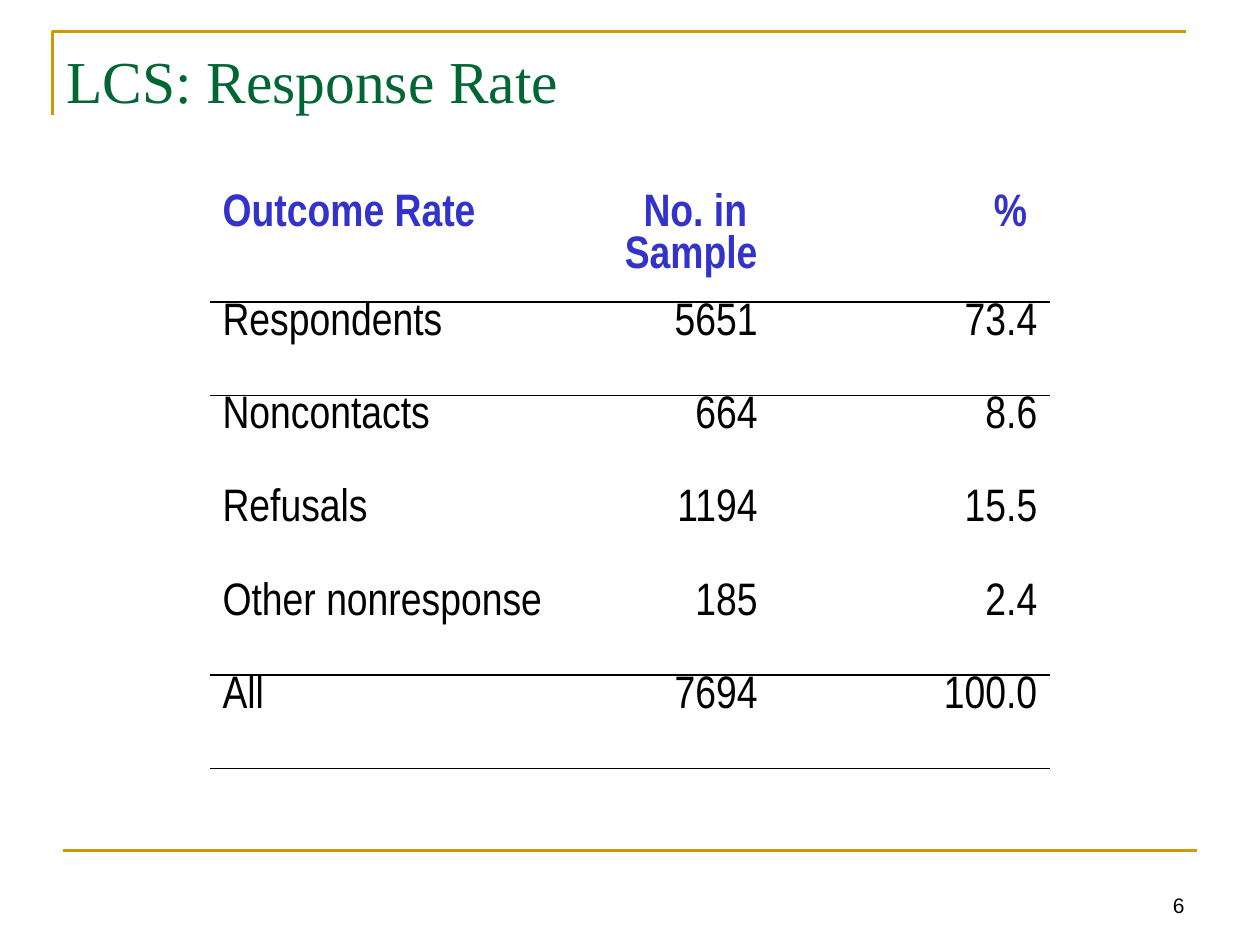
from lxml import etree
from pptx import Presentation
from pptx import util as u
from pptx.dml.color import RGBColor
from pptx.enum import shapes, text
from pptx.oxml import ns

Pt = u.Pt
GOLD = RGBColor(0xCC, 0x99, 0x00)
GREEN = RGBColor(0x00, 0x66, 0x33)
BLUE = RGBColor(0x33, 0x33, 0xCC)
BLACK = RGBColor(0, 0, 0)
LEFT, RIGHT = text.PP_ALIGN.LEFT, text.PP_ALIGN.RIGHT
TOP, MIDDLE, BOTTOM = (text.MSO_ANCHOR.TOP, text.MSO_ANCHOR.MIDDLE,
                       text.MSO_ANCHOR.BOTTOM)
NO_STYLE = "{2D5ABB26-0587-4C30-8999-92F81FD0307C}"

ROWS = [
    ("Outcome Rate", "No. in \nSample", "% "),
    ("Respondents", "5651", "73.4"),
    ("Noncontacts", "664", "8.6"),
    ("Refusals", "1194", "15.5"),
    ("Other nonresponse", "185", "2.4"),
    ("All", "7694", "100.0"),
]
COL_WIDTHS = (217.4, 102.8, 159.8)
ROW_HEIGHTS = (60.8,) + (53.3,) * 5
RULED_ROWS = {0: "B", 1: "T", 4: "B", 5: "TB"}


def write(tf, content, font="Arial", size=12, color=BLACK, bold=False, align=LEFT):
    """Fill a text frame, one paragraph per line of content."""
    for i, line in enumerate(content.split("\n")):
        p = tf.paragraphs[0] if i == 0 else tf.add_paragraph()
        p.alignment = align
        r = p.add_run()
        r.text = line
        r.font.name, r.font.size, r.font.bold = font, Pt(size), bold
        r.font.color.rgb = color


class SlideBuilder:
    def __init__(self, s, line_color=GOLD, line_width=1.5):
        self.s = s
        self.line_color = line_color
        self.line_width = line_width

    def _stroke(self, sp):
        sp.line.color.rgb = self.line_color
        sp.line.width = Pt(self.line_width)

    def line(self, x1, y1, x2, y2):
        sp = self.s.shapes.add_connector(
            shapes.MSO_CONNECTOR.STRAIGHT, Pt(x1), Pt(y1), Pt(x2), Pt(y2))
        self._stroke(sp)
        etree.SubElement(sp._element.spPr, ns.qn("a:effectLst"))

    def polyline(self, start, *points):
        builder = self.s.shapes.build_freeform(*map(Pt, start))
        builder.add_line_segments([(Pt(x), Pt(y)) for x, y in points], close=False)
        sp = builder.convert_to_shape()
        sp.fill.background()
        sp.shadow.inherit = False
        self._stroke(sp)

    def text(self, content, x, y, w, h, anchor=TOP, **fmt):
        tf = self.s.shapes.add_textbox(Pt(x), Pt(y), Pt(w), Pt(h)).text_frame
        tf.word_wrap = True
        tf.vertical_anchor = anchor
        write(tf, content, **fmt)

    def table(self, rows, x, y, widths, heights, ruled):
        """Draw a plain table; ruled maps a row to its border sides (T, B)."""
        table = self.s.shapes.add_table(
            len(rows), len(widths), Pt(x), Pt(y),
            Pt(sum(widths)), Pt(sum(heights))).table
        table.horz_banding = False
        table._tbl.tblPr.find(ns.qn("a:tableStyleId")).text = NO_STYLE
        for col, width in zip(table.columns, widths):
            col.width = Pt(width)
        for i, values in enumerate(rows):
            table.rows[i].height = Pt(heights[i])
            for j, value in enumerate(values):
                cell = table.cell(i, j)
                cell.margin_top = cell.margin_bottom = 0
                write(cell.text_frame, value, font="Arial Narrow", size=26,
                      color=BLACK if i else BLUE, bold=i == 0,
                      align=RIGHT if j else LEFT)
                for side in ruled.get(i, ""):
                    self._border(cell, side)
                cell.fill.background()

    def _border(self, cell, side, width=1, color=BLACK):
        ln = etree.SubElement(cell._tc.get_or_add_tcPr(), ns.qn(f"a:ln{side}"),
                              w=str(Pt(width)))
        fill = etree.SubElement(ln, ns.qn("a:solidFill"))
        etree.SubElement(fill, ns.qn("a:srgbClr"), val=str(color))


def main():
    prs = Presentation()
    prs.slide_width, prs.slide_height = Pt(720), Pt(540)
    b = SlideBuilder(prs.slides.add_slide(prs.slide_layouts[6]))
    b.polyline((30, 66), (30, 18), (678, 18))
    b.line(36, 486, 684, 486)
    b.text("6", 516, 492, 168, 36, anchor=BOTTOM, align=RIGHT)
    b.text("LCS: Response Rate", 31, 20, 612, 51, anchor=MIDDLE,
           font="Times New Roman", size=34, color=GREEN)
    b.table(ROWS, 120, 110.2, COL_WIDTHS, ROW_HEIGHTS, RULED_ROWS)
    prs.save("out.pptx")


if __name__ == "__main__":
    main()
